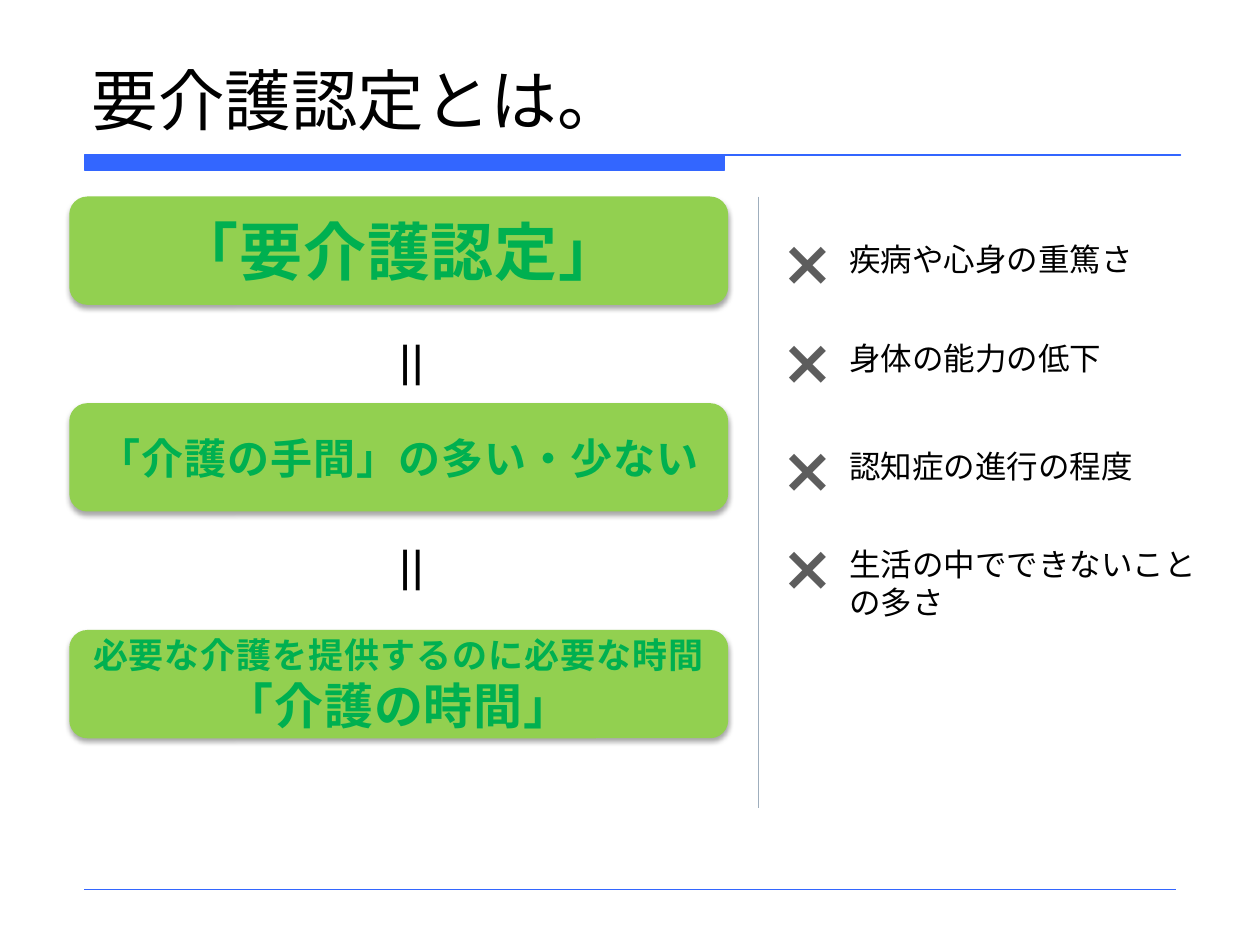
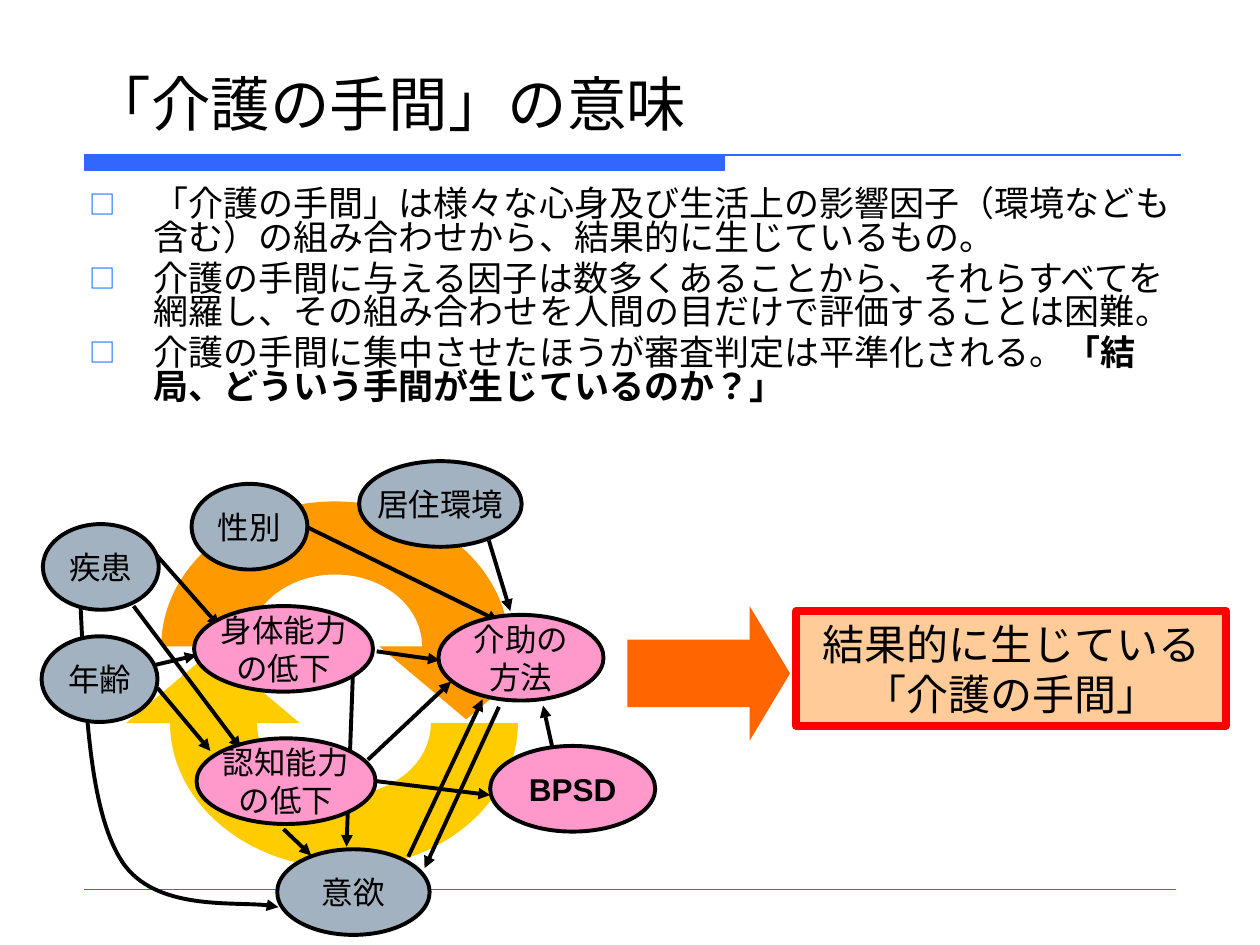
from lxml import etree
from pptx import Presentation
from pptx import util as u
from pptx.dml.color import RGBColor
from pptx.enum import shapes, text
from pptx.oxml import ns

PX = 9144  # 100 px to the inch
COLOURS = {
    "band": "3366FF", "bullet": "0066FF", "ink": "000000", "divider": "9FAEBD",
    "green": "92D050", "green_text": "00B050", "cross": "5D5D5D",
    "factor": "A3B2C1", "ability": "FF99CC", "ring_top": "FF9900",
    "ring_bottom": "FFCC00", "arrow": "FF6600", "result": "FFCC99",
    "result_edge": "FF0000",
}
SANS, CJK, LATIN = "DejaVu Sans", "Noto Sans CJK JP", "Arial"
KINDS = shapes.MSO_SHAPE
CENTER = text.PP_ALIGN.CENTER
MIDDLE = text.MSO_ANCHOR.MIDDLE


def px(*lengths):
    return [round(length * PX) for length in lengths]


def rgb(name):
    return RGBColor.from_string(COLOURS[name])


def add_xml(parent, tag, **attributes):
    element = etree.SubElement(parent, ns.qn(tag))
    for name, value in attributes.items():
        element.set(name, str(value))
    return element


def add_span(para, words, size, font, colour="ink", bold=False, spacing=0):
    """Add runs to a paragraph, with a line break at each newline."""
    for number, line in enumerate(words.split("\n")):
        if number:
            para.add_line_break()
        if not line:
            continue
        span = para.add_run()
        span.text = line
        span.font.size = u.Pt(size)
        span.font.name = font
        span.font.bold = bold
        span.font.color.rgb = rgb(colour)
        properties = span.font._element
        properties.set("lang", "ja-JP")
        add_xml(properties, "a:ea", typeface=font)
        if spacing:
            properties.set("spc", str(spacing))


def paint(shape, fill=None, line=None, width=2.25):
    shape.shadow.inherit = False
    if fill:
        shape.fill.solid()
        shape.fill.fore_color.rgb = rgb(fill)
    else:
        shape.fill.background()
    if line:
        shape.line.color.rgb = rgb(line)
        shape.line.width = u.Pt(width)
    else:
        shape.line.fill.background()


def add_block(page, kind, box, fill, line=None, width=2.25):
    block = page.shapes.add_shape(kind, *px(*box))
    paint(block, fill, line, width)
    return block


def add_text(page, box, words, size, font=SANS, anchor=text.MSO_ANCHOR.TOP, **style):
    label = page.shapes.add_textbox(*px(*box))
    frame = label.text_frame
    frame.word_wrap = True
    frame.vertical_anchor = anchor
    add_span(frame.paragraphs[0], words, size, font, **style)
    return label


def add_arrowhead(shape):
    add_xml(shape.line._get_or_add_ln(), "a:tailEnd", type="triangle")


def add_line(page, start, end, colour="ink", width=2.25, arrow=False):
    line = page.shapes.add_connector(shapes.MSO_CONNECTOR.STRAIGHT, *px(*start, *end))
    line.line.color.rgb = rgb(colour)
    line.line.width = u.Pt(width)
    if arrow:
        add_arrowhead(line)
    add_xml(line._element.spPr, "a:effectLst")
    return line


def add_outline(page, start, segments, close=True):
    """Draw segments of one point (straight) or three points (cubic curve)."""
    builder = page.shapes.build_freeform(*px(*start), scale=1.0)
    points = [px(*point) for segment in segments for point in segment]
    builder.add_line_segments(points, close=close)
    outline = builder.convert_to_shape()
    route = outline._element.spPr.find(".//" + ns.qn("a:path"))
    steps = iter(route.findall(ns.qn("a:lnTo")))
    for segment in segments:
        group = [next(steps) for _ in segment]
        if len(group) == 3:
            curve = etree.Element(ns.qn("a:cubicBezTo"))
            group[0].addprevious(curve)
            for step in group:
                curve.append(step[0])
                route.remove(step)
    return outline


def dress_layout(deck):
    """Put the title band and the footer rule on the blank layout."""
    layout = deck.slide_layouts[6]
    for placeholder in list(layout.placeholders):
        layout.shapes._spTree.remove(placeholder._element)
    return layout


def move_to_layout(layout, *parts):
    for part in parts:
        layout.shapes._spTree.append(part._element)


def add_page(deck, title, size):
    page = deck.slides.add_slide(deck.slide_layouts[6])
    add_text(page, (63, 33, 875, 82), title, size, anchor=text.MSO_ANCHOR.BOTTOM)
    return page


def add_band_and_rule(page, layout):
    band = add_outline(page, (67, 123), [[(937, 123)], [(575, 123)],
                                         [(575, 135)], [(67, 135)]])
    paint(band, "band", "band", 0.75)
    rule = add_line(page, (67, 706), (933, 706), "band", 0.25)
    move_to_layout(layout, band, rule)


def add_definition_chain(page, left, top):
    steps = [
        (0, [("「要介護認定」", 36)]),
        (164, [("「介護の手間」の多い・少ない", 24)]),
        (344, [("必要な介護を提供するのに必要な時間\n", 20), ("「介護の時間」", 28)]),
    ]
    for offset, spans in steps:
        step = add_block(page, KINDS.ROUNDED_RECTANGLE,
                         (left, top + offset, 523, 86), "green")
        effects = step._element.spPr.find(ns.qn("a:effectLst"))
        shadow = add_xml(effects, "a:outerShdw", blurRad=u.Pt(3.1), dist=u.Pt(1.8),
                         dir=5400000, rotWithShape=0)
        add_xml(add_xml(shadow, "a:srgbClr", val=COLOURS["ink"]), "a:alpha", val=35000)
        step.text_frame.word_wrap = True
        step.text_frame.vertical_anchor = MIDDLE
        para = step.text_frame.paragraphs[0]
        para.alignment = CENTER
        for words, size in spans:
            add_span(para, words, size, CJK, "green_text", True, 50)
    for offset in (102, 265):
        equals = add_text(page, (left + 230, top + offset, 74, 55), "＝", 32)
        equals.text_frame._txBody.bodyPr.set("vert", "eaVert")


def add_exclusions(page, left, top):
    add_line(page, (left, top), (left, top + 485), "divider", 0.75)
    exclusions = [(16, "疾病や心身の重篤さ"), (94, "身体の能力の低下"),
                  (180, "認知症の進行の程度"), (258, "生活の中でできないことの多さ")]
    for offset, words in exclusions:
        add_text(page, (left + 8, top + offset, 78, 71), "×", 36,
                 colour="cross", bold=True)
        add_text(page, (left + 62, top + offset + 14, 305, 40), words, 18)


def add_explanation(page, box):
    points = [
        [("「介護の手間」は様々な心身及び生活上の影響因子（環境なども含む）の"
          "組み合わせから、結果的に生じているもの。", False)],
        [("介護の手間に与える因子は数多くあることから、それらすべてを網羅し、"
          "その組み合わせを人間の目だけで評価することは困難。", False)],
        [("介護の手間に集中させたほうが審査判定は平準化される。", False),
         ("「結局、どういう手間が生じているのか？」", True)],
    ]
    frame = page.shapes.add_textbox(*px(*box)).text_frame
    frame.word_wrap = True
    indent = px(51)[0]
    for number, spans in enumerate(points):
        para = frame.add_paragraph() if number else frame.paragraphs[0]
        para.line_spacing = 0.8
        para.space_before = u.Pt(4)
        properties = para._p.get_or_add_pPr()
        properties.set("marL", str(indent))
        properties.set("indent", str(-indent))
        properties.set("hangingPunct", "0")
        add_xml(add_xml(properties, "a:buClr"), "a:srgbClr", val=COLOURS["bullet"])
        add_xml(properties, "a:buSzPct", val=75000)
        add_xml(properties, "a:buFont", typeface=CJK)
        add_xml(properties, "a:buChar", char="□")
        for words, bold in spans:
            add_span(para, words, 20, SANS, bold=bold)


def add_ring_arrow(page, centre, turn, colour):
    """Draw half a ring ending in an arrowhead; turn -1 rotates it half way round."""
    def at(x, y):
        return centre[0] + turn * x, centre[1] + turn * y

    segments = [
        [(69, -32), (38, -57), (0, -57)], [(-38, -57), (-69, -32), (-69, 0)],
        [(-138, 0)],
        [(-138, -63), (-76, -115), (0, -115)], [(76, -115), (138, -63), (138, 0)],
        [(173, 0)], [(104, 58)], [(35, 0)],
    ]
    ring = add_outline(page, at(69, 0),
                       [[at(*point) for point in segment] for segment in segments])
    paint(ring, colour)


def add_bubble(page, box, words, colour):
    bubble = add_block(page, KINDS.OVAL, box, colour, "ink")
    frame = bubble.text_frame
    frame.word_wrap = False
    frame.vertical_anchor = MIDDLE
    frame.paragraphs[0].alignment = CENTER
    add_span(frame.paragraphs[0], words, 18, LATIN, bold=words.isascii())


def add_factor_map(page, left, top):
    def at(x, y):
        return left + x, top + y

    def add_bubbles(colour, bubbles):
        for x, y, width, words in bubbles:
            add_bubble(page, (*at(x, y), width, 68), words, colour)

    add_ring_arrow(page, at(233, 147), 1, "ring_top")
    add_ring_arrow(page, at(240, 208), -1, "ring_bottom")
    add_bubbles("factor", [(252, 0, 129, "居住環境"), (187, 308, 121, "意欲"),
                           (119, 18, 92, "性別")])
    arrows = [
        ((89, 162), (123, 154)), ((92, 180), (134, 230)), ((192, 292), (214, 313)),
        ((210, 52), (363, 127)), ((259, 237), (325, 175)), ((291, 314), (350, 189)),
        ((247, 171), (242, 306)), ((355, 63), (372, 119)), ((266, 254), (356, 265)),
        ((406, 230), (398, 194)), ((363, 195), (304, 323)), ((89, 72), (141, 131)),
        ((73, 115), (158, 228)), ((266, 151), (316, 158)),
    ]
    for start, end in arrows:
        add_line(page, at(*start), at(*end), arrow=True)
    curve = add_outline(page, at(31, 116),
                        [[at(35, 197), at(38, 278), at(64, 318)],
                         [at(90, 357), at(167, 348), at(188, 354)]], close=False)
    paint(curve, line="ink")
    add_arrowhead(curve)
    add_bubbles("factor", [(1, 50, 92, "疾患"), (0, 139, 92, "年齢")])
    add_bubbles("ability", [(315, 122, 131, "介助の\n方法"),
                            (121, 115, 142, "身体能力\nの低下"),
                            (123, 220, 142, "認知能力\nの低下"),
                            (356, 226, 131, "BPSD")])


def add_result(page, left, top):
    arrow = add_block(page, KINDS.RIGHT_ARROW, (left, top, 129, 107), "arrow")
    arrow.adjustments[0], arrow.adjustments[1] = 0.5, 0.3
    result = add_block(page, KINDS.RECTANGLE, (left + 134, top + 4, 341, 91),
                       "result", "result_edge", 4.5)
    result.text_frame.word_wrap = True
    result.text_frame.vertical_anchor = MIDDLE
    para = result.text_frame.paragraphs[0]
    para.alignment = CENTER
    add_span(para, "結果的に生じている\n「介護の手間」", 24, LATIN)


def main():
    deck = Presentation()
    deck.slide_width, deck.slide_height = px(1000, 750)
    layout = dress_layout(deck)

    definition = add_page(deck, "要介護認定とは。", 38)
    add_band_and_rule(definition, layout)
    add_definition_chain(definition, 55, 156)
    add_exclusions(definition, 602, 156)

    meaning = add_page(deck, "「介護の手間」の意味", 34)
    add_explanation(meaning, (61, 146, 900, 253))
    add_factor_map(meaning, 33, 366)
    add_result(meaning, 498, 481)

    deck.save("out.pptx")


if __name__ == "__main__":
    main()
